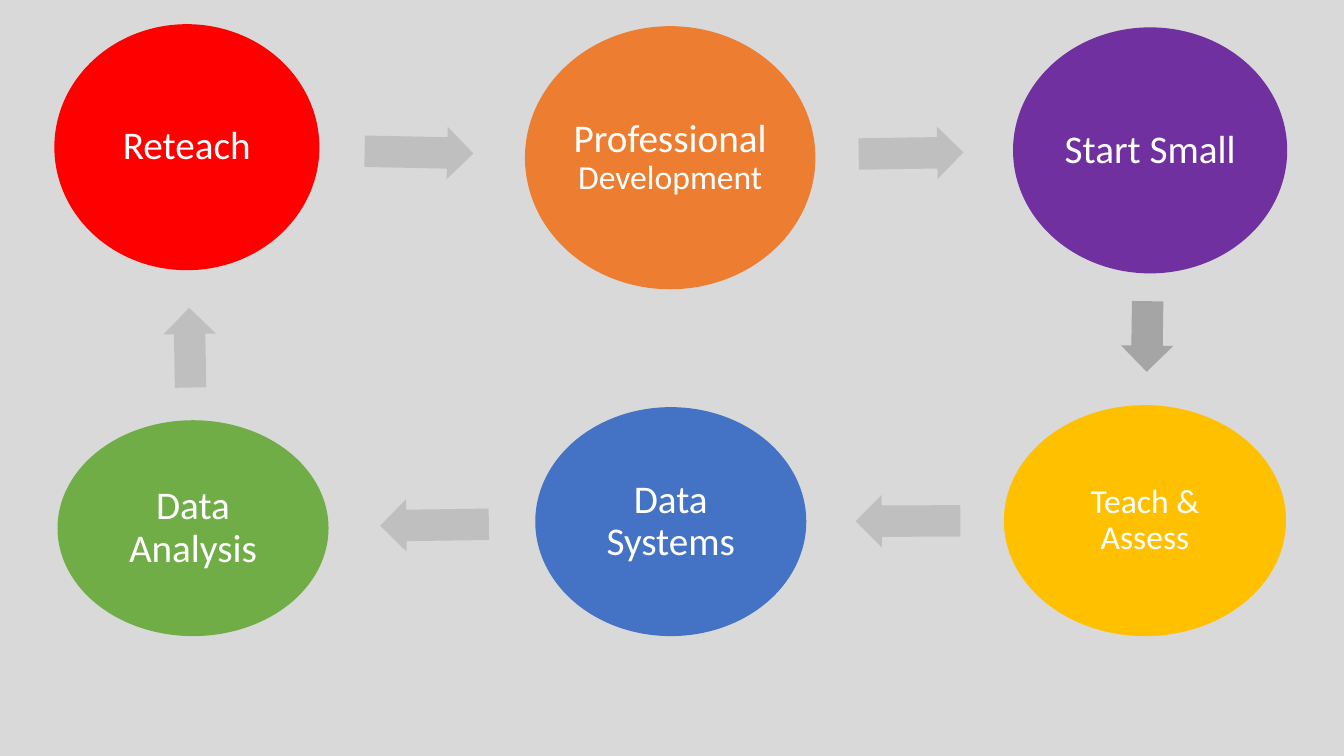
from pptx import Presentation
from pptx.dml.color import RGBColor
from pptx.enum.shapes import MSO_SHAPE as Shape
from pptx.enum.text import MSO_ANCHOR as Anchor, PP_ALIGN as Align
from pptx.util import Cm, Pt

COLORS = {
    "background": "D9D9D9", "text": "FFFFFF",
    "arrow": "BFBFBF", "dark arrow": "A5A5A5",
    "orange": "ED7D31", "purple": "7030A0", "yellow": "FFC000",
    "blue": "4472C4", "green": "70AD47", "red": "FF0000",
}
FONT = "Calibri"
ARROW_HEIGHT = 1.32
INSET = 0.1

STEPS = [
    ([("Professional", 28), (" Development", 24)], "orange", (13.23, 0.66, 7.32, 6.63)),
    ([("Start Small", 28)], "purple", (25.53, 0.69, 6.91, 6.2)),
    ([("Teach & Assess", 24)], "yellow", (25.3, 10.21, 7.11, 5.82)),
    ([("Data Systems", 28)], "blue", (13.49, 10.26, 6.83, 5.77)),
    ([("Data Analysis", 28)], "green", (1.45, 10.59, 6.83, 5.44)),
    ([("Reteach", 28)], "red", (1.37, 0.61, 6.68, 6.2)),
]
ARROWS = [
    (21.64, 3.2, 2.64, 359.1, "arrow"),
    (28.02, 7.82, 1.78, 90.8, "dark arrow"),
    (21.56, 12.47, 2.64, 179.8, "arrow"),
    (9.58, 12.57, 2.74, 179.2, "arrow"),
    (3.78, 8.1, 2.01, 269, "arrow"),
    (9.19, 3.18, 2.74, 1.2, "arrow"),
]


def color(name):
    return RGBColor.from_string(COLORS[name])


def add_filled(page, kind, place, fill):
    shape = page.shapes.add_shape(kind, *map(Cm, place))
    shape.shadow.inherit = False
    shape.fill.solid()
    shape.fill.fore_color.rgb = color(fill)
    shape.line.fill.background()
    return shape


def add_step(page, spans, fill, place):
    frame = add_filled(page, Shape.OVAL, place, fill).text_frame
    frame.word_wrap = True
    frame.vertical_anchor = Anchor.MIDDLE
    frame.margin_left = frame.margin_right = Cm(INSET)
    frame.margin_top = frame.margin_bottom = Cm(INSET)
    para = frame.paragraphs[0]
    para.alignment = Align.CENTER
    para.line_spacing = 0.9
    for text, size in spans:
        span = para.add_run()
        span.text = text
        span.font.name = FONT
        span.font.size = Pt(size)
        span.font.color.rgb = color("text")


def add_arrow(page, left, top, length, angle, fill):
    arrow = add_filled(page, Shape.RIGHT_ARROW, (left, top, length, ARROW_HEIGHT), fill)
    arrow.adjustments[0] = 0.6
    arrow.adjustments[1] = 0.5
    arrow.rotation = angle


def main():
    deck = Presentation()
    deck.slide_width, deck.slide_height = Cm(33.87), Cm(19.05)
    page = deck.slides.add_slide(deck.slide_layouts[6])
    page.background.fill.solid()
    page.background.fill.fore_color.rgb = color("background")
    for step, arrow in zip(STEPS, ARROWS):
        add_step(page, *step)
        add_arrow(page, *arrow)
    deck.save("out.pptx")


if __name__ == "__main__":
    main()
